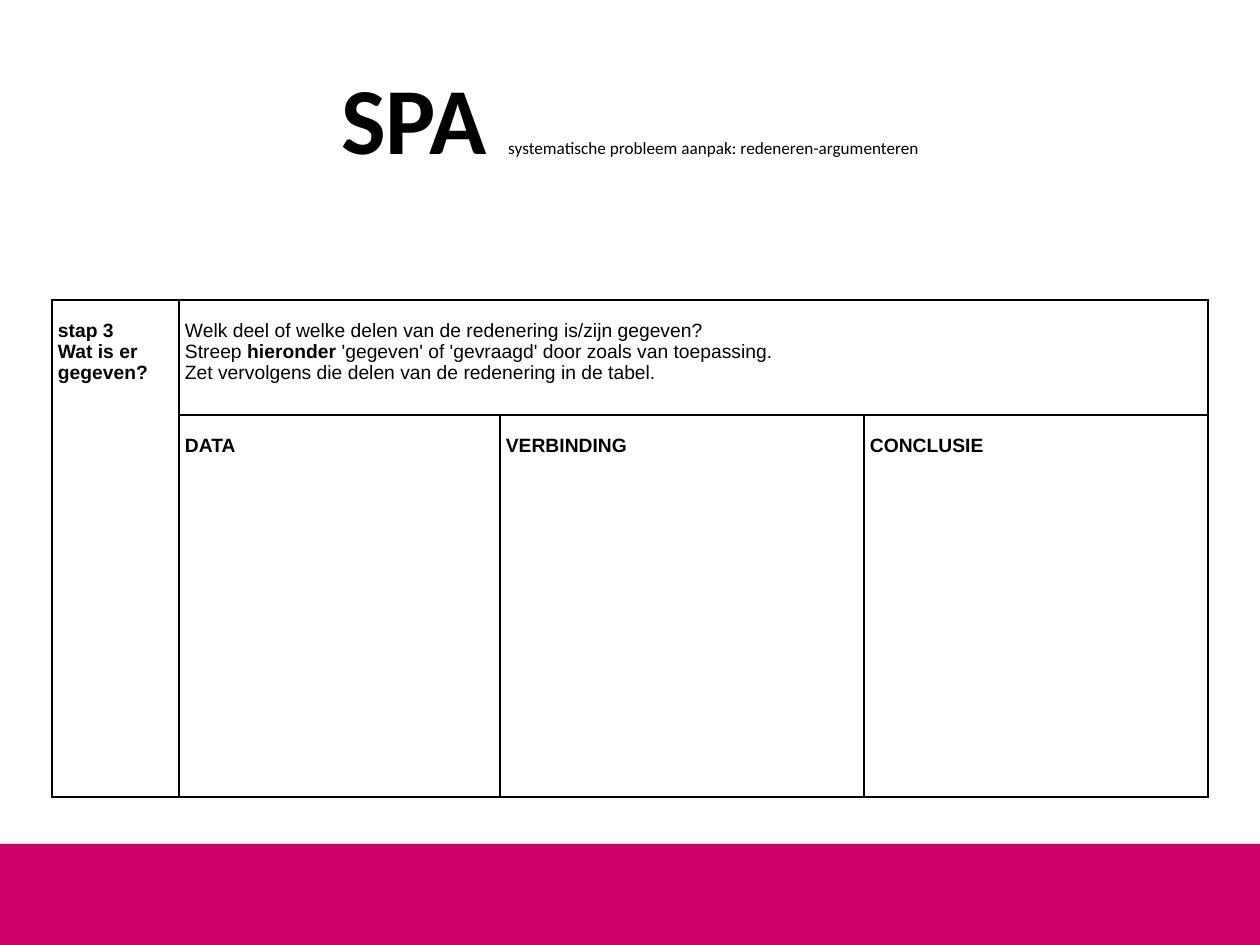
from lxml.etree import SubElement
from pptx import Presentation
from pptx.dml.color import RGBColor
from pptx.enum.shapes import MSO_SHAPE
from pptx.enum.text import MSO_ANCHOR, PP_ALIGN
from pptx.oxml.ns import qn
from pptx.util import Emu, Pt

COLORS = {"band": "CC0066", "ink": "000000"}


def px(length):
    return Emu(round(length * 914400 / 126))


def add_run(paragraph, text, font, size, bold):
    run = paragraph.add_run()
    run.text = text
    run.font.name = font
    run.font.size = Pt(size)
    run.font.bold = bold
    run.font.color.rgb = RGBColor.from_string(COLORS["ink"])


prs = Presentation()
prs.slide_width, prs.slide_height = px(1260), px(945)
slide = prs.slides.add_slide(prs.slide_layouts[6])

band = slide.shapes.add_shape(MSO_SHAPE.RECTANGLE, 0, px(844), px(1260), px(101))
band.shadow.inherit = False
band.fill.solid()
band.fill.fore_color.rgb = RGBColor.from_string(COLORS["band"])
band.line.fill.background()

title = slide.shapes.add_textbox(px(63), px(38), px(1134), px(157)).text_frame
title.word_wrap = True
title.vertical_anchor = MSO_ANCHOR.MIDDLE
heading = title.paragraphs[0]
heading.alignment = PP_ALIGN.CENTER
add_run(heading, "SPA ", "Calibri", 54, True)
add_run(heading, "systematische probleem aanpak: redeneren-argumenteren", "Calibri", 9.8, False)

column_widths = [127, 321, 364, 344]
row_heights = [115, 382]
step_table = slide.shapes.add_table(
    2, 4, px(52), px(300), px(sum(column_widths)), px(sum(row_heights))
).table
step_table.first_row = step_table.horz_banding = False
for column, width in zip(step_table.columns, column_widths):
    column.width = px(width)
for row, height in zip(step_table.rows, row_heights):
    row.height = px(height)

for cell in step_table.iter_cells():
    cell.margin_left = cell.margin_right = px(6)
    cell.margin_top, cell.margin_bottom = px(21), 0
    properties = cell._tc.get_or_add_tcPr()
    for side in ("a:lnL", "a:lnR", "a:lnT", "a:lnB"):
        border = SubElement(properties, qn(side), w=str(Pt(1)))
        SubElement(SubElement(border, qn("a:solidFill")), qn("a:srgbClr"), val=COLORS["ink"])
    cell.fill.background()

step_table.cell(0, 0).merge(step_table.cell(1, 0))
step_table.cell(0, 1).merge(step_table.cell(0, 3))

cell_lines = {
    (0, 0): [[("stap 3", True)], [("Wat is er gegeven?", True)]],
    (0, 1): [
        [("Welk deel of welke delen van de redenering is/zijn gegeven?", False)],
        [
            ("Streep ", False),
            ("hieronder", True),
            (" 'gegeven' of 'gevraagd' door zoals van toepassing.", False),
        ],
        [("Zet vervolgens die delen van de redenering in de tabel.", False)],
    ],
    (1, 1): [[("DATA", True)]],
    (1, 2): [[("VERBINDING", True)]],
    (1, 3): [[("CONCLUSIE", True)]],
}
for position, lines in cell_lines.items():
    paragraph = step_table.cell(*position).text_frame.paragraphs[0]
    paragraph.line_spacing = Pt(12)
    for index, line in enumerate(lines):
        if index:
            paragraph.add_line_break()
        for text, bold in line:
            add_run(paragraph, text, "Arial", 11, bold)

prs.save("out.pptx")
